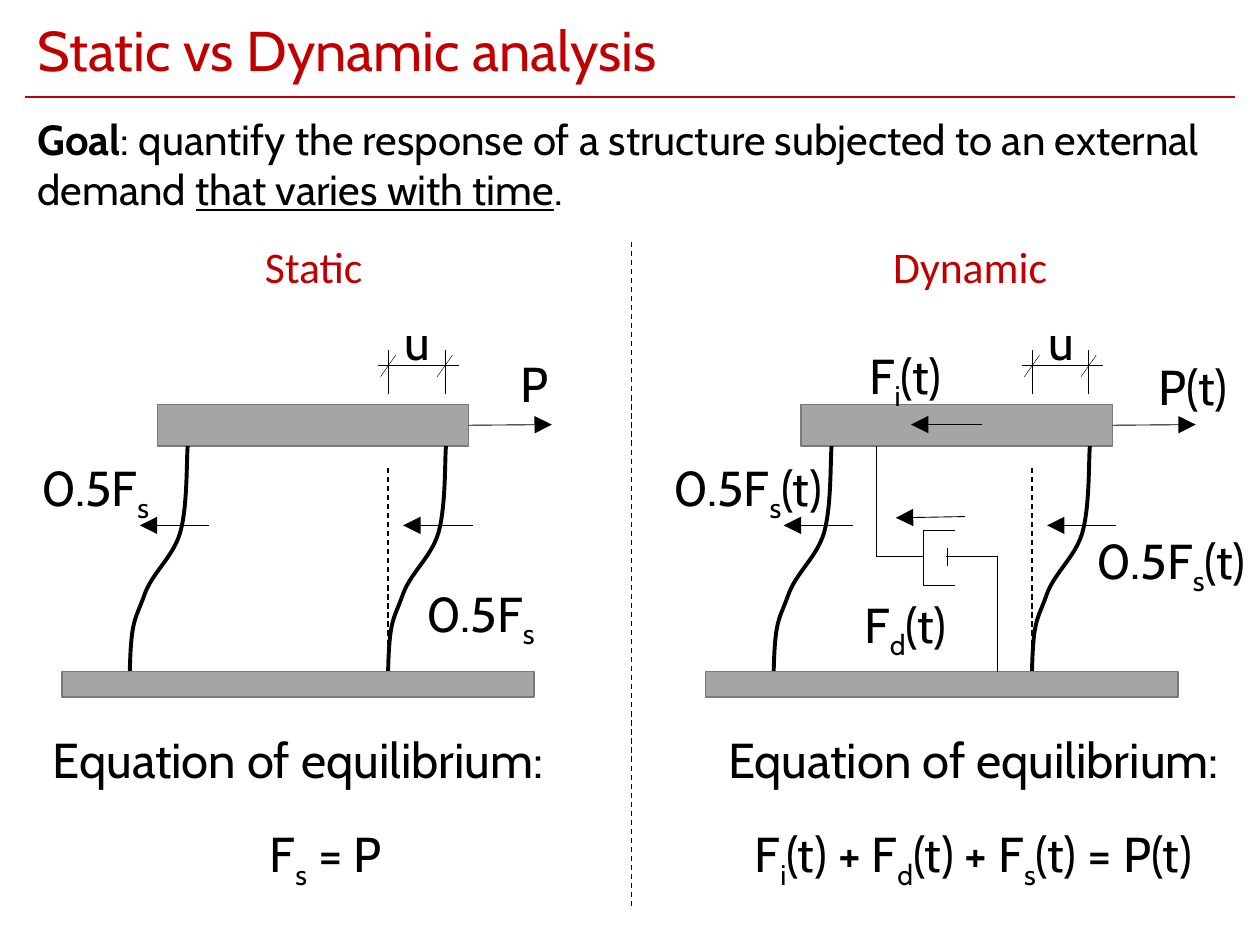
from dataclasses import dataclass

from lxml.etree import SubElement
from pptx import Presentation
from pptx.dml.color import RGBColor
from pptx.enum.dml import MSO_LINE
from pptx.enum.shapes import MSO_CONNECTOR, MSO_SHAPE
from pptx.enum.text import MSO_ANCHOR, PP_ALIGN
from pptx.oxml.ns import qn
from pptx.util import Inches, Pt


@dataclass(frozen=True)
class Theme:
    red: RGBColor = RGBColor(0xC0, 0x00, 0x00)
    black: RGBColor = RGBColor(0x00, 0x00, 0x00)
    grey: RGBColor = RGBColor(0xA5, 0xA5, 0xA5)
    outline: RGBColor = RGBColor(0x7A, 0x7A, 0x7A)
    font: str = "Cabin"
    heading_font: str = "Calibri"
    title_size: int = 32
    goal_size: int = 24
    heading_size: int = 25
    label_size: int = 28


THEME = Theme()

# Content: in formulas, every second piece is a subscript
TITLE = "Static vs Dynamic analysis"
GOAL = [("Goal", "bold"),
        (": quantify the response of a structure subjected to an external demand ", ""),
        ("that varies with time", "underline"), (".", "")]
EQUILIBRIUM = ["Equation of equilibrium:"]
SPRING_T = ["0.5F", "s", "(t)"]
PANELS = [
    {"frame_left": 0.49, "heading": ("Static", 1.59), "damper": False,
     "labels": [(["P"], 3.74, 2.76, 1, 0.56), (["u"], 2.81, 2.42, 1, 0.56),
                (["0.5F", "s"], 3, 4.58, 1.63, 0.56),
                (["0.5F", "s"], -0.06, 3.58, 1.63, 0.56),
                (["F", "s", " = P"], 0.5, 6.49, 4.17, 0.63),
                (EQUILIBRIUM, 0.28, 5.74, 4.17, 0.63)]},
    {"frame_left": 5.6, "heading": ("Dynamic", 6.8), "damper": True,
     "labels": [(["P(t)"], 8.97, 2.78, 1, 0.56), (["u"], 7.92, 2.42, 1, 0.56),
                (SPRING_T, 8.48, 4.16, 1.63, 0.56),
                (SPRING_T, 5.12, 3.58, 1.63, 0.56),
                (["F", "i", "(t)"], 6.37, 2.69, 1.63, 0.56),
                (["F", "d", "(t)"], 6.37, 4.67, 1.63, 0.56),
                (["F", "i", "(t) + F", "d", "(t) + F", "s", "(t) = P(t)"],
                 5.64, 6.49, 4.17, 0.63),
                (EQUILIBRIUM, 5.64, 5.74, 4.17, 0.63)]},
]

# Frame geometry: x from the left end of the base, y from the top of the slide
COLUMN_FEET = (0.54, 2.59)
FORCE_TAILS = (1.17, 3.26)
COLUMN_START = (0, 5.35)
COLUMN_CURVE = [  # Bezier control points, three per segment, x from the foot
    (0.01, 4.92), (0.04, 4.93), (0.11, 4.74),
    (0.17, 4.55), (0.34, 4.43), (0.40, 4.23),
    (0.46, 4.02), (0.45, 3.66), (0.46, 3.54)]
DRIFT = 0.45
DAMPER_LINES = [
    (1.36, 3.54, 1.36, 4.42), (2.32, 4.42, 2.32, 5.33),
    (1.36, 4.42, 1.73, 4.42), (1.91, 4.42, 2.32, 4.42),
    (1.92, 4.49, 1.92, 4.35), (1.73, 4.65, 1.73, 4.21),
    (1.73, 4.21, 1.98, 4.21), (1.73, 4.65, 1.98, 4.65)]
DYNAMIC_FORCES = [(2.06, 4.1, 1.51, 4.11), (2.19, 3.37, 1.63, 3.37)]

presentation = Presentation()
presentation.slide_width, presentation.slide_height = Inches(10), Inches(7.5)
slide = presentation.slides.add_slide(presentation.slide_layouts[6])
shapes = slide.shapes


def add_line(x1, y1, x2, y2, width=0.5, color=THEME.black, dashed=False, arrow=False):
    line = shapes.add_connector(MSO_CONNECTOR.STRAIGHT, *map(Inches, (x1, y1, x2, y2)))
    line.line.width, line.line.color.rgb = Pt(width), color
    if dashed:
        line.line.dash_style = MSO_LINE.DASH
    if arrow:
        SubElement(line.line._get_or_add_ln(), qn("a:tailEnd"),
                   type="triangle", w="lg", len="lg")
    SubElement(line._element.spPr, qn("a:effectLst"))
    return line


def add_bar(left, top, width, height):
    bar = shapes.add_shape(MSO_SHAPE.RECTANGLE, *map(Inches, (left, top, width, height)))
    bar.shadow.inherit = False
    bar.fill.solid()
    bar.fill.fore_color.rgb = THEME.grey
    bar.line.color.rgb, bar.line.width = THEME.outline, Pt(1)
    return bar


def add_text_box(left, top, width, height, wrap=True, align=PP_ALIGN.LEFT):
    box = shapes.add_textbox(*map(Inches, (left, top, width, height)))
    box.text_frame.word_wrap = wrap
    paragraph = box.text_frame.paragraphs[0]
    paragraph.alignment = align
    return box.text_frame, paragraph


def add_run(paragraph, text, size, color=THEME.black, font=THEME.font):
    run = paragraph.add_run()
    run.text = text
    run.font.size, run.font.name, run.font.color.rgb = Pt(size), font, color
    return run


def add_formula(pieces, *place):
    _, paragraph = add_text_box(*place, wrap=False, align=PP_ALIGN.CENTER)
    for index, piece in enumerate(pieces):
        run = add_run(paragraph, piece, THEME.label_size)
        if index % 2:
            run._r.get_or_add_rPr().set("baseline", "-25000")


def add_column(foot):
    start_x, start_y = COLUMN_START
    builder = shapes.build_freeform(Inches(foot + start_x), Inches(start_y))
    builder.add_line_segments([(Inches(foot + x), Inches(y)) for x, y in COLUMN_CURVE],
                              close=False)
    column = builder.convert_to_shape()
    # Turn each three straight steps into one Bezier segment
    steps = list(column._element.iter(qn("a:lnTo")))
    outline = steps[0].getparent()
    for first in range(0, len(steps), 3):
        curve = SubElement(outline, qn("a:cubicBezTo"))
        for step in steps[first:first + 3]:
            curve.append(step[0])
            outline.remove(step)
    column.shadow.inherit = False
    column.fill.background()
    column.line.color.rgb, column.line.width = THEME.black, Pt(2.25)


def add_frame(left):
    # Beam, columns and base
    beam = add_bar(left + 0.76, 3.21, 2.47, 0.33)
    for foot in COLUMN_FEET:
        add_column(left + foot)
    add_bar(left, 5.33, 3.75, 0.2)

    # Applied load and restoring forces
    load = add_line(left + 3.23, 3.37, left + 3.89, 3.37, arrow=True)
    load.begin_connect(beam, 3)
    for tail in FORCE_TAILS:
        add_line(left + tail, 4.17, left + tail - 0.55, 4.17, arrow=True)

    # Undeformed position and dimension of u
    origin = left + COLUMN_FEET[1]
    add_line(origin, 5.26, origin, 3.69, width=0.75, dashed=True)
    add_line(origin - 0.08, 2.9, origin + 0.56, 2.9)
    for x in (origin, origin + DRIFT):
        add_line(x, 3.13, x, 2.78, width=0.25)
        add_line(x - 0.06, 2.99, x + 0.06, 2.82, width=0.25)


# Title and rule
add_line(0.2, 0.77, 9.8, 0.77, width=1, color=THEME.red)
frame, paragraph = add_text_box(0.2, 0.07, 9.6, 0.7)
frame.vertical_anchor = MSO_ANCHOR.MIDDLE
paragraph.line_spacing = 0.9
add_run(paragraph, TITLE, THEME.title_size, THEME.red)

# Goal
_, paragraph = add_text_box(0.2, 0.85, 9.6, 0.98)
paragraph.space_before = Pt(10)
for text, style in GOAL:
    run = add_run(paragraph, text, THEME.goal_size)
    run.font.bold = style == "bold"
    run.font.underline = style == "underline"

# Static and dynamic panels
for panel in PANELS:
    left = panel["frame_left"]
    add_frame(left)
    if panel["damper"]:
        for x1, y1, x2, y2 in DAMPER_LINES:
            add_line(left + x1, y1, left + x2, y2)
        for x1, y1, x2, y2 in DYNAMIC_FORCES:
            add_line(left + x1, y1, left + x2, y2, arrow=True)
    for pieces, *place in panel["labels"]:
        add_formula(pieces, *place)
    heading, heading_left = panel["heading"]
    _, paragraph = add_text_box(heading_left, 1.85, 1.8, 0.52, align=PP_ALIGN.CENTER)
    add_run(paragraph, heading, THEME.heading_size, THEME.red, THEME.heading_font)

# Divider
add_line(5.01, 1.92, 5.01, 7.21, width=0.75, dashed=True)

presentation.save("out.pptx")
